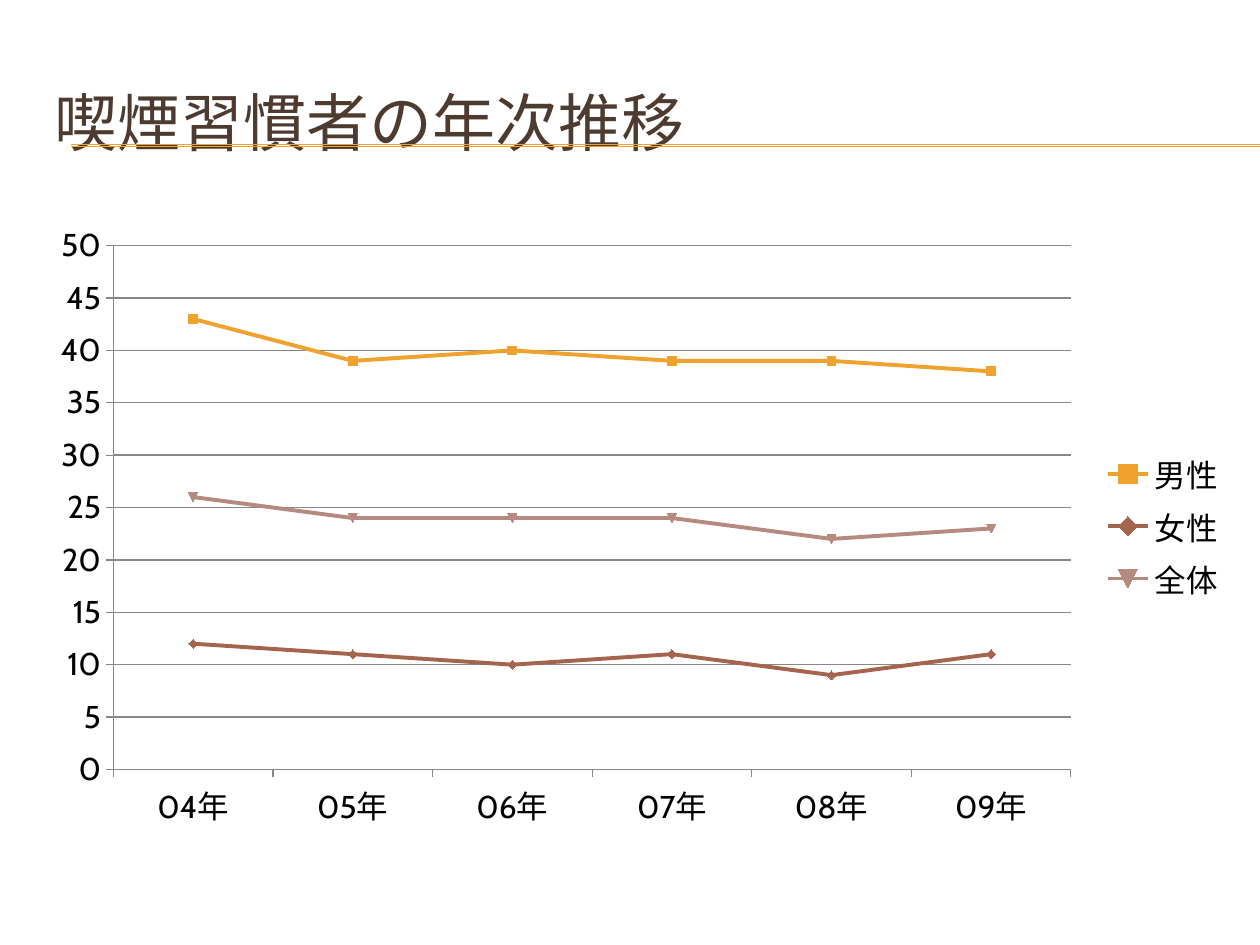
from lxml.etree import SubElement
from pptx import Presentation
from pptx.chart.data import CategoryChartData
from pptx.dml.color import RGBColor
from pptx.enum.chart import XL_CHART_TYPE, XL_LEGEND_POSITION, XL_TICK_MARK
from pptx.enum.shapes import MSO_CONNECTOR
from pptx.enum.text import MSO_ANCHOR, PP_ALIGN
from pptx.oxml.ns import qn
from pptx.util import Inches, Pt

WIDE, HIGH = Inches(10), Inches(7.5)
LEFT, SPAN = 0.033, 0.95
FONT = "Cabin"
GOLD, GRAY = "F0A22E", "878787"
YEARS = [f"{year:02}年" for year in range(4, 10)]
RATES = [
    ("男性", GOLD, (43, 39, 40, 39, 39, 38)),
    ("女性", "A5644E", (12, 11, 10, 11, 9, 11)),
    ("全体", "B58B80", (26, 24, 24, 24, 22, 23)),
]
PLOT = {"x": 0.06, "y": 0.05, "w": 0.8, "h": 0.84}


def tint(color, code):
    color.rgb = RGBColor.from_string(code)


def box(left, top, width, height):
    return (int(left * WIDE), int(top * HIGH),
            int(width * WIDE), int(height * HIGH))


def stroke(line, code, width):
    tint(line.color, code)
    line.width = Pt(width)


def style(font, size, code):
    font.name, font.size = FONT, Pt(size)
    tint(font.color, code)


def add_rule(slide, top):
    y = int(top * HIGH)
    rule = slide.shapes.add_connector(
        MSO_CONNECTOR.STRAIGHT, int(0.056 * WIDE), y, WIDE, y)
    stroke(rule.line, GOLD, 0.75)
    SubElement(rule._element.spPr, qn("a:effectLst"))


def set_title(slide, text):
    title = slide.shapes.title
    title.left, title.top, title.width, title.height = box(
        LEFT, 0.067, SPAN, 0.123)
    frame = title.text_frame
    frame.text = text
    frame.vertical_anchor = MSO_ANCHOR.MIDDLE
    line = frame.paragraphs[0]
    line.alignment = PP_ALIGN.LEFT
    style(line.runs[0].font, 36, "4E3B30")


def set_plot(chart):
    area = chart._chartSpace.chart.plotArea
    for old in area.findall(qn("c:layout")):
        area.remove(old)
    layout = area.makeelement(qn("c:layout"))
    area.insert(0, layout)
    manual = SubElement(layout, qn("c:manualLayout"))
    SubElement(manual, qn("c:layoutTarget"), val="inner")
    for key in "xy":
        SubElement(manual, qn(f"c:{key}Mode"), val="edge")
    for key, share in PLOT.items():
        SubElement(manual, qn(f"c:{key}"), val=str(share))


def set_axis(axis):
    axis.major_tick_mark = XL_TICK_MARK.OUTSIDE
    axis.minor_tick_mark = XL_TICK_MARK.NONE
    stroke(axis.format.line, GRAY, 0.75)


def add_lines(slide):
    data = CategoryChartData(number_format="General")
    data.categories = YEARS
    for name, code, rates in RATES:
        data.add_series(name, rates)
    chart = slide.shapes.add_chart(
        XL_CHART_TYPE.LINE_MARKERS, *box(LEFT, 0.227, SPAN, 0.66), data).chart
    chart.has_title = False
    style(chart.font, 18, "000000")
    chart.has_legend = True
    chart.legend.position = XL_LEGEND_POSITION.RIGHT
    chart.legend.include_in_layout = False
    set_axis(chart.category_axis)
    scale = chart.value_axis
    set_axis(scale)
    scale.minimum_scale, scale.maximum_scale, scale.major_unit = 0, 50, 5
    scale.has_major_gridlines = True
    stroke(scale.major_gridlines.format.line, GRAY, 0.75)
    chart.plots[0].vary_by_categories = False
    for series, (name, code, rates) in zip(chart.plots[0].series, RATES):
        series.smooth = False
        stroke(series.format.line, code, 2.25)
        look = series.marker.format
        look.fill.solid()
        tint(look.fill.fore_color, code)
        stroke(look.line, code, 0.75)
    set_plot(chart)


def main():
    deck = Presentation()
    deck.slide_width, deck.slide_height = WIDE, HIGH
    slide = deck.slides.add_slide(deck.slide_layouts[5])
    for top in (0.153, 0.155):
        add_rule(slide, top)
    set_title(slide, "喫煙習慣者の年次推移")
    add_lines(slide)
    deck.save("out.pptx")


if __name__ == "__main__":
    main()
